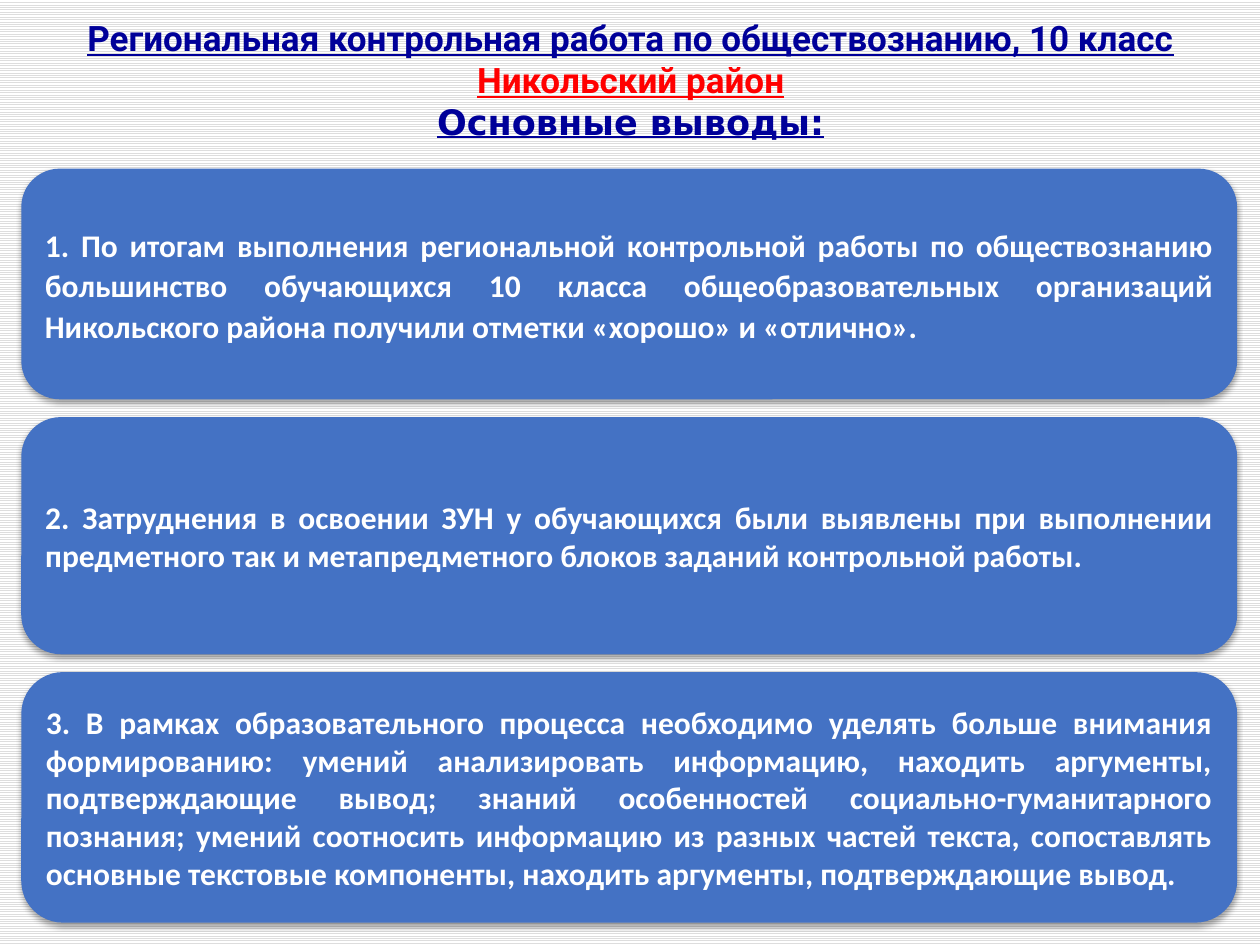
from dataclasses import dataclass, field

from lxml import etree
from pptx import Presentation
from pptx.dml.color import RGBColor
from pptx.enum.dml import MSO_PATTERN
from pptx.enum.shapes import MSO_SHAPE
from pptx.enum.text import MSO_ANCHOR as Anchor, PP_ALIGN as Align
from pptx.oxml import parse_xml
from pptx.oxml.ns import nsdecls, qn
from pptx.util import Cm, Pt

NAVY = RGBColor(0x00, 0x00, 0x99)
RED = RGBColor(0xFF, 0x00, 0x00)
BLUE = RGBColor(0x44, 0x72, 0xC4)
WHITE = RGBColor(0xFF, 0xFF, 0xFF)
GRAY = RGBColor(0xDD, 0xDD, 0xDD)

TITLE_FONT = {"size": Pt(20), "bold": True, "underline": True}
CARD_FONT = {"size": Pt(18), "bold": True, "name": "Calibri"}

CARD_LEFT, CARD_TOP, CARD_WIDTH, CARD_GAP = 0.43, 3.4, 24.51, 0.36  # cm


@dataclass
class Card:
    text: str
    height: float
    spacing: dict = field(default_factory=dict)


CARDS = [
    Card("1. По итогам выполнения региональной контрольной работы по "
         "обществознанию большинство обучающихся 10 класса "
         "общеобразовательных организаций Никольского района получили "
         "отметки «хорошо» и «отлично».",
         4.65, {"line_spacing": 1.07, "space_after": Pt(8)}),
    Card("2. Затруднения в освоении ЗУН у обучающихся были выявлены при "
         "выполнении предметного так и метапредметного блоков заданий "
         "контрольной работы.", 4.78),
    Card("3. В рамках образовательного процесса необходимо уделять больше "
         "внимания формированию: умений анализировать информацию, находить "
         "аргументы, подтверждающие вывод; знаний особенностей "
         "социально-гуманитарного познания; умений соотносить информацию из "
         "разных частей текста, сопоставлять основные текстовые компоненты, "
         "находить аргументы, подтверждающие вывод.", 5.05),
]


def set_attrs(obj, values: dict) -> None:
    for name, value in values.items():
        setattr(obj, name, value)


def add_run(p, text: str, color: RGBColor, fmt: dict) -> None:
    r = p.add_run()
    r.text = text
    set_attrs(r.font, fmt)
    r.font.color.rgb = color


def add_shadow(sp) -> None:
    sp.shadow.inherit = False
    effects = sp._element.spPr.find(qn("a:effectLst"))
    effects.append(parse_xml(
        f'<a:outerShdw {nsdecls("a")} blurRad="{Pt(3.1)}" dist="{Pt(1.8)}" '
        'dir="5400000" rotWithShape="0"><a:srgbClr val="000000">'
        '<a:alpha val="35000"/></a:srgbClr></a:outerShdw>'))


def add_title(s) -> None:
    tf = s.shapes.add_textbox(0, 0, Cm(25.43), Cm(3)).text_frame
    set_attrs(tf, {"word_wrap": True, "vertical_anchor": Anchor.BOTTOM})
    roboto = TITLE_FONT | {"name": "Roboto"}
    p = tf.paragraphs[0]
    p.alignment = Align.CENTER
    add_run(p, "Региональная контрольная работа по обществознанию, 10 класс",
            NAVY, roboto)
    p = tf.add_paragraph()
    p.alignment = Align.CENTER
    add_run(p, "Никольский район", RED, roboto)
    p.add_line_break()
    add_run(p, "Основные выводы:", NAVY, TITLE_FONT | {"name": "DejaVu Sans"})


def add_card(s, card: Card, top: float) -> None:
    sp = s.shapes.add_shape(MSO_SHAPE.ROUNDED_RECTANGLE, Cm(CARD_LEFT),
                            Cm(top), Cm(CARD_WIDTH), Cm(card.height))
    sp.fill.solid()
    sp.fill.fore_color.rgb = BLUE
    sp.line.fill.background()
    add_shadow(sp)
    tf = sp.text_frame
    set_attrs(tf, {"word_wrap": True, "vertical_anchor": Anchor.MIDDLE})
    p = tf.paragraphs[0]
    set_attrs(p, {"alignment": Align.JUSTIFY} | card.spacing)
    add_run(p, card.text, WHITE, CARD_FONT)


def main() -> None:
    prs = Presentation()
    set_attrs(prs, {"slide_width": Cm(25.4), "slide_height": Cm(19.05)})
    s = prs.slides.add_slide(prs.slide_layouts[6])

    # Striped background
    fill = s.background.fill
    fill.patterned()
    fill.pattern = MSO_PATTERN.LIGHT_HORIZONTAL
    fill.fore_color.rgb = GRAY
    fill.back_color.rgb = WHITE

    # Heading
    add_title(s)

    # Conclusions, stacked with equal gaps
    top = CARD_TOP
    for card in CARDS:
        add_card(s, card, top)
        top += card.height + CARD_GAP

    prs.save("out.pptx")


if __name__ == "__main__":
    main()
